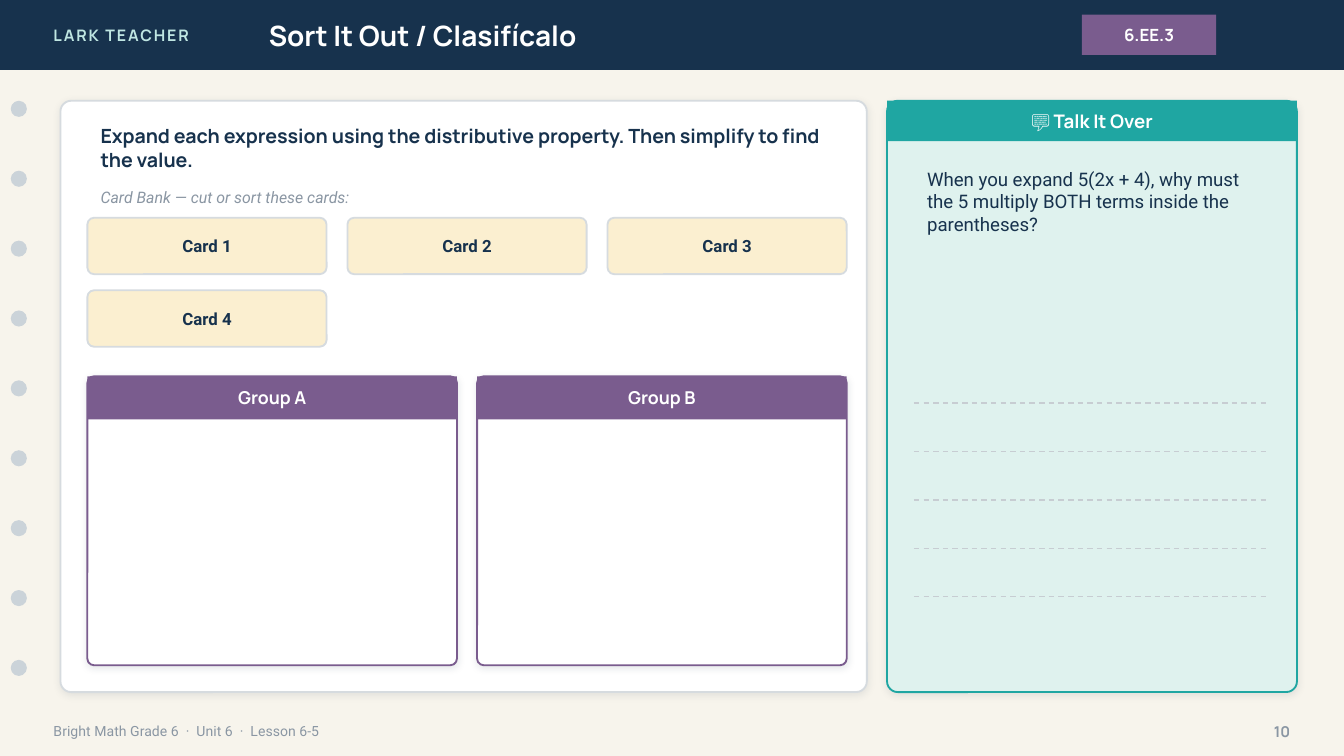
from lxml.etree import SubElement
from pptx import Presentation
from pptx.dml.color import RGBColor
from pptx.enum.dml import MSO_LINE_DASH_STYLE as Dash
from pptx.enum.shapes import MSO_CONNECTOR as Connector, MSO_SHAPE as Shape
from pptx.enum.text import MSO_ANCHOR as Anchor, MSO_AUTO_SIZE as AutoSize, PP_ALIGN as Align
from pptx.oxml import parse_xml
from pptx.oxml.ns import nsdecls, qn
from pptx.util import Pt

COLORS = {
    "paper": "F7F4EC", "navy": "17324D", "mint": "BFE6E2", "white": "FFFFFF",
    "purple": "7A5C8E", "hole": "CBD3D9", "muted": "8A96A3", "border": "D6DBDF",
    "card": "FBEFD0", "teal": "1FA6A2", "pale_teal": "DFF2EE", "rule": "C7CDD2",
    "shadow": "1C2E42",
}
HEADING, BODY = "Manrope", "Roboto"
BAR_HEIGHT = 37.44
PANEL_TOP, PANEL_HEIGHT = 54, 316.8
SORT_LEFT = 46.8
TALK_LEFT, TALK_WIDTH = 475.2, 219.6


def color(name):
    return RGBColor.from_string(COLORS[name])


def write(shape, text, *, size, ink, font=BODY, bold=False, italic=False,
          align=Align.LEFT, anchor=Anchor.MIDDLE, spacing=None):
    frame = shape.text_frame
    frame.word_wrap = True
    frame.auto_size = AutoSize.NONE
    frame.vertical_anchor = anchor
    paragraph = frame.paragraphs[0]
    paragraph.alignment = align
    run = paragraph.add_run()
    run.text = text
    run.font.name = font
    run.font.size = Pt(size)
    run.font.bold = bold
    run.font.italic = italic
    run.font.color.rgb = color(ink)
    if spacing:
        run.font._element.set("spc", str(spacing * 100))


def add_label(slide, box, text, **text_format):
    label = slide.shapes.add_textbox(*map(Pt, box))
    write(label, text, **text_format)


def add_block(slide, box, fill, kind=Shape.RECTANGLE, border=None):
    block = slide.shapes.add_shape(kind, *map(Pt, box))
    block.shadow.inherit = False
    block.fill.solid()
    block.fill.fore_color.rgb = color(fill)
    if border:
        block.line.color.rgb = color(border)
        block.line.width = Pt(1)
    else:
        block.line.fill.background()
    return block


def add_rounded(slide, box, fill, border, radius):
    block = add_block(slide, box, fill, Shape.ROUNDED_RECTANGLE, border)
    block.adjustments[0] = radius / min(box[2:])
    return block


def add_panel(slide, box, fill, border, radius):
    """Rounded block with a soft shadow below it."""
    panel = add_rounded(slide, box, fill, border, radius)
    effects = panel.element.spPr.find(qn("a:effectLst"))
    effects.append(parse_xml(
        f'<a:outerShdw {nsdecls("a")} blurRad="{Pt(4)}" dist="{Pt(1)}" dir="5400000" '
        f'algn="bl" rotWithShape="0"><a:srgbClr val="{COLORS["shadow"]}">'
        '<a:alpha val="10000"/></a:srgbClr></a:outerShdw>'))


def add_banner(slide, box, fill, text, size):
    banner = add_block(slide, box, fill)
    write(banner, text, size=size, ink="white", font=HEADING, bold=True, align=Align.CENTER)


def add_writing_line(slide, left, right, y):
    line = slide.shapes.add_connector(Connector.STRAIGHT, Pt(left), Pt(y), Pt(right), Pt(y))
    line.line.color.rgb = color("rule")
    line.line.width = Pt(0.75)
    line.line.dash_style = Dash.DASH
    SubElement(line.element.spPr, qn("a:effectLst"))


def add_header(slide):
    bar = add_block(slide, (0, 0, 720, BAR_HEIGHT), "navy")
    title = slide.shapes.title
    title.left, title.top, title.width, title.height = map(Pt, (136.8, 0, 403.2, BAR_HEIGHT))
    write(title, "Sort It Out / Clasifícalo", size=15, ink="white", font=HEADING, bold=True)
    bar.element.addnext(title.element)  # keeps the title in front of the bar
    add_label(slide, (21.6, 0, 172.8, BAR_HEIGHT), "LARK TEACHER",
              size=8.5, ink="mint", font=HEADING, bold=True, spacing=1)
    add_banner(slide, (579.6, 7.92, 72, 21.6), "purple", "6.EE.3", 9)


def add_binder_holes(slide):
    for row in range(9):
        add_block(slide, (5.76, PANEL_TOP + row * 37.44, 8.64, 8.64), "hole", Shape.OVAL)


def add_footer(slide):
    add_label(slide, (21.6, 381.6, 504, 20.16), "Bright Math Grade 6  ·  Unit 6  ·  Lesson 6-5",
              size=7.5, ink="muted")
    add_label(slide, (662.4, 381.6, 36, 20.16), "10",
              size=8, ink="muted", font=HEADING, bold=True, align=Align.RIGHT)


def add_sorting_area(slide):
    add_panel(slide, (32.4, PANEL_TOP, 432, PANEL_HEIGHT), "white", "border", 5.76)
    add_label(slide, (SORT_LEFT, 64.8, 403.2, 28.8),
              "Expand each expression using the distributive property. "
              "Then simplify to find the value.",
              size=10.5, ink="navy", font=HEADING, bold=True)
    add_label(slide, (SORT_LEFT, 97.2, 403.2, 17.28), "Card Bank — cut or sort these cards:",
              size=8.5, ink="muted", italic=True)
    for index in range(4):
        row, column = divmod(index, 3)
        box = (SORT_LEFT + column * 139.32, 116.64 + row * 38.88, 128.16, 30.24)
        card = add_rounded(slide, box, "card", "border", 3.6)
        write(card, f"Card {index + 1}", size=9, ink="navy", bold=True, align=Align.CENTER)
    for column, group in enumerate("AB"):
        left = SORT_LEFT + column * 208.8
        add_panel(slide, (left, 201.6, 198, 154.8), "white", "purple", 3.6)
        add_banner(slide, (left, 201.6, 198, 23.04), "purple", f"Group {group}", 9.5)


def add_discussion(slide):
    add_panel(slide, (TALK_LEFT, PANEL_TOP, TALK_WIDTH, PANEL_HEIGHT), "pale_teal", "teal", 5.76)
    add_banner(slide, (TALK_LEFT, PANEL_TOP, TALK_WIDTH, 21.6), "teal", "💬 Talk It Over", 10)
    add_label(slide, (489.6, 86.4, 194.4, 108),
              "When you expand 5(2x + 4), why must the 5 multiply BOTH terms "
              "inside the parentheses?",
              size=10, ink="navy", anchor=Anchor.TOP)
    for row in range(5):
        add_writing_line(slide, 489.6, 680.4, 216 + row * 25.92)


def main():
    deck = Presentation()
    deck.slide_width, deck.slide_height = Pt(720), Pt(405)
    slide = deck.slides.add_slide(deck.slide_layouts[5])
    slide.background.fill.solid()
    slide.background.fill.fore_color.rgb = color("paper")
    add_header(slide)
    add_binder_holes(slide)
    add_footer(slide)
    add_sorting_area(slide)
    add_discussion(slide)
    deck.save("out.pptx")


if __name__ == "__main__":
    main()
